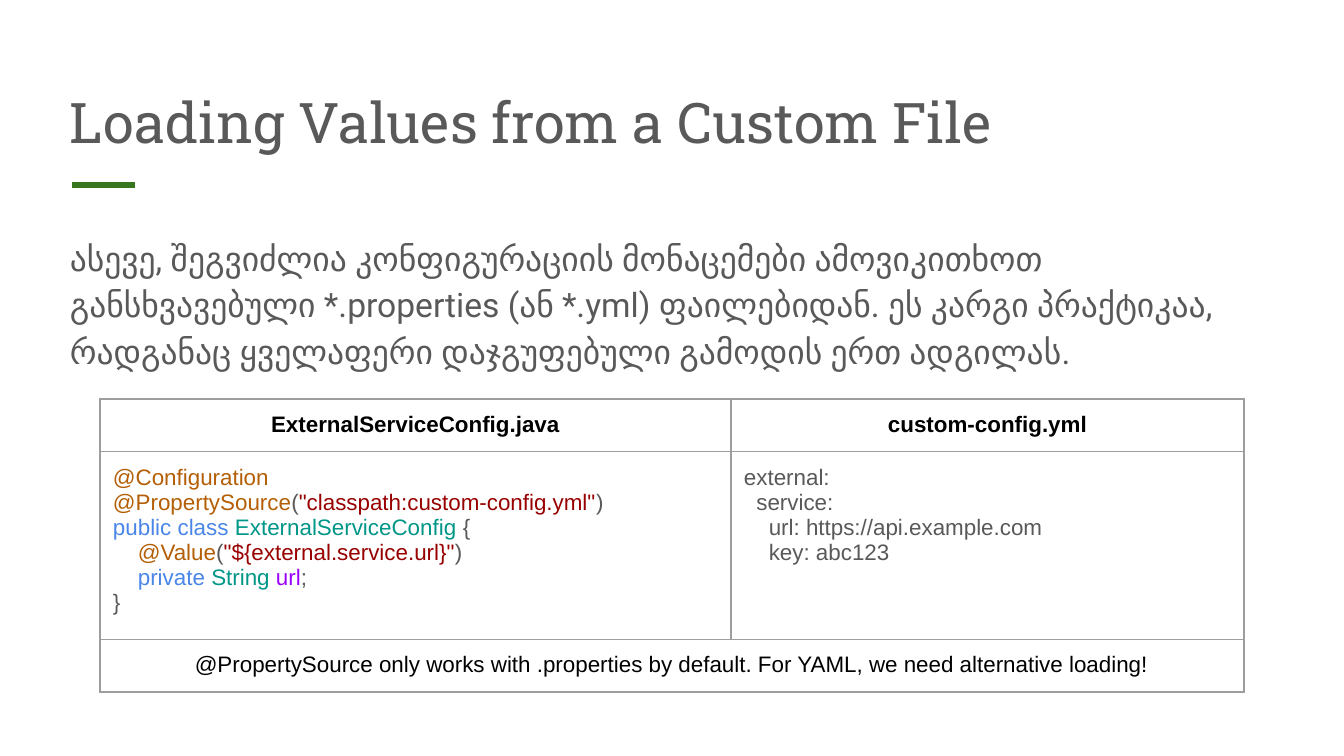
"""Build a slide on loading configuration values from a custom file."""
from lxml import etree
from pptx import Presentation
from pptx.dml.color import RGBColor
from pptx.enum.shapes import MSO_CONNECTOR
from pptx.enum.text import MSO_ANCHOR, PP_ALIGN
from pptx.oxml.ns import qn
from pptx.util import Pt

STRAIGHT = MSO_CONNECTOR.STRAIGHT
TOP, BOTTOM = MSO_ANCHOR.TOP, MSO_ANCHOR.BOTTOM
LEFT, CENTER = PP_ALIGN.LEFT, PP_ALIGN.CENTER

BLACK = RGBColor(0x00, 0x00, 0x00)
GRAY = RGBColor(0x59, 0x59, 0x59)
GREEN = RGBColor(0x38, 0x76, 0x1D)
ORANGE = RGBColor(0xB4, 0x5F, 0x06)
RED = RGBColor(0x98, 0x00, 0x00)
BLUE = RGBColor(0x4A, 0x86, 0xE8)
TEAL = RGBColor(0x00, 0x96, 0x88)
PURPLE = RGBColor(0x99, 0x00, 0xFF)
BORDER = RGBColor(0x9E, 0x9E, 0x9E)

PX = 914400 / 134.4
INSET = 13


def px(length):
    return round(length * PX)


def write_paragraphs(text_frame, lines, font_format, paragraph_format):
    for index, line in enumerate(lines):
        paragraph = text_frame.paragraphs[0] if index == 0 else text_frame.add_paragraph()
        for name, value in paragraph_format.items():
            setattr(paragraph, name, value)
        for text, color in line:
            run = paragraph.add_run()
            run.text = text
            run.font.color.rgb = color
            for name, value in font_format.items():
                setattr(run.font, name, value)


presentation = Presentation()
presentation.slide_width, presentation.slide_height = px(1344), px(756)
slide = presentation.slides.add_slide(presentation.slide_layouts[6])

accent = slide.shapes.add_connector(STRAIGHT, px(72), px(185), px(135), px(185))
accent.line.color.rgb = GREEN
accent.line.width = Pt(3)
etree.SubElement(accent._element.spPr, qn("a:effectLst"))

TITLE = "Loading Values from a Custom File"
BODY = (
    "ასევე, შეგვიძლია კონფიგურაციის მონაცემები ამოვიკითხოთ განსხვავებული "
    "*.properties (ან *.yml) ფაილებიდან. ეს კარგი პრაქტიკაა, რადგანაც "
    "ყველაფერი დაჯგუფებული გამოდის ერთ ადგილას."
)
text_boxes = [
    (TITLE, 67, 101, BOTTOM, {"name": "Roboto Slab", "size": Pt(30)}, {}),
    (BODY, 219, 453, TOP, {"name": "Roboto", "size": Pt(18)},
     {"line_spacing": 1.15, "space_after": Pt(12)}),
]
for text, top, height, anchor, font_format, paragraph_format in text_boxes:
    text_box = slide.shapes.add_textbox(px(57), px(top), px(1230), px(height))
    frame_format = {"word_wrap": True, "vertical_anchor": anchor}
    for side in ("left", "top", "right", "bottom"):
        frame_format[f"margin_{side}"] = px(INSET)
    for name, value in frame_format.items():
        setattr(text_box.text_frame, name, value)
    write_paragraphs(text_box.text_frame, [[(text, GRAY)]], font_format, paragraph_format)

JAVA_CODE = [
    [("@Configuration", ORANGE)],
    [("@PropertySource", ORANGE), ("(", GRAY),
     ("\"classpath:custom-config.yml\"", RED), (")", GRAY)],
    [("public class ", BLUE), ("ExternalServiceConfig ", TEAL), ("{", GRAY)],
    [("    ", GRAY), ("@Value", ORANGE), ("(", GRAY),
     ("\"${external.service.url}\"", RED), (")", GRAY)],
    [("    ", GRAY), ("private ", BLUE), ("String ", TEAL), ("url", PURPLE), (";", GRAY)],
    [("}", GRAY)],
]
YAML_CODE = [
    [("external:", GRAY)],
    [("  service:", GRAY)],
    [("    url: https://api.example.com", GRAY)],
    [("    key: abc123", GRAY)],
]
NOTE = (
    "@PropertySource only works with .properties by default. "
    "For YAML, we need alternative loading!"
)
table_rows = [
    (52, True, CENTER, [[[("ExternalServiceConfig.java", BLACK)]],
                        [[("custom-config.yml", BLACK)]]]),
    (177, False, LEFT, [JAVA_CODE, YAML_CODE]),
    (52, False, CENTER, [[[(NOTE, BLACK)]], []]),
]
column_widths = [631, 513]
table_height = sum(row[0] for row in table_rows)
table = slide.shapes.add_table(
    len(table_rows), len(column_widths), px(100), px(399),
    px(sum(column_widths)), px(table_height),
).table
table.first_row = table.horz_banding = False
for column, width in zip(table.columns, column_widths):
    column.width = px(width)
table.cell(2, 0).merge(table.cell(2, 1))

for row, (height, bold, alignment, contents) in zip(table.rows, table_rows):
    row.height = px(height)
    for cell, lines in zip(row.cells, contents):
        for side in ("left", "top", "right", "bottom"):
            setattr(cell, f"margin_{side}", px(INSET))
        properties = cell._tc.get_or_add_tcPr()
        for edge in ("a:lnL", "a:lnR", "a:lnT", "a:lnB"):
            border = etree.SubElement(properties, qn(edge), w=str(Pt(0.75)))
            fill = etree.SubElement(border, qn("a:solidFill"))
            etree.SubElement(fill, qn("a:srgbClr"), val=str(BORDER))
        cell.fill.background()
        write_paragraphs(
            cell.text_frame, lines,
            {"name": "Arial", "size": Pt(12), "bold": bold}, {"alignment": alignment},
        )

presentation.save("out.pptx")
